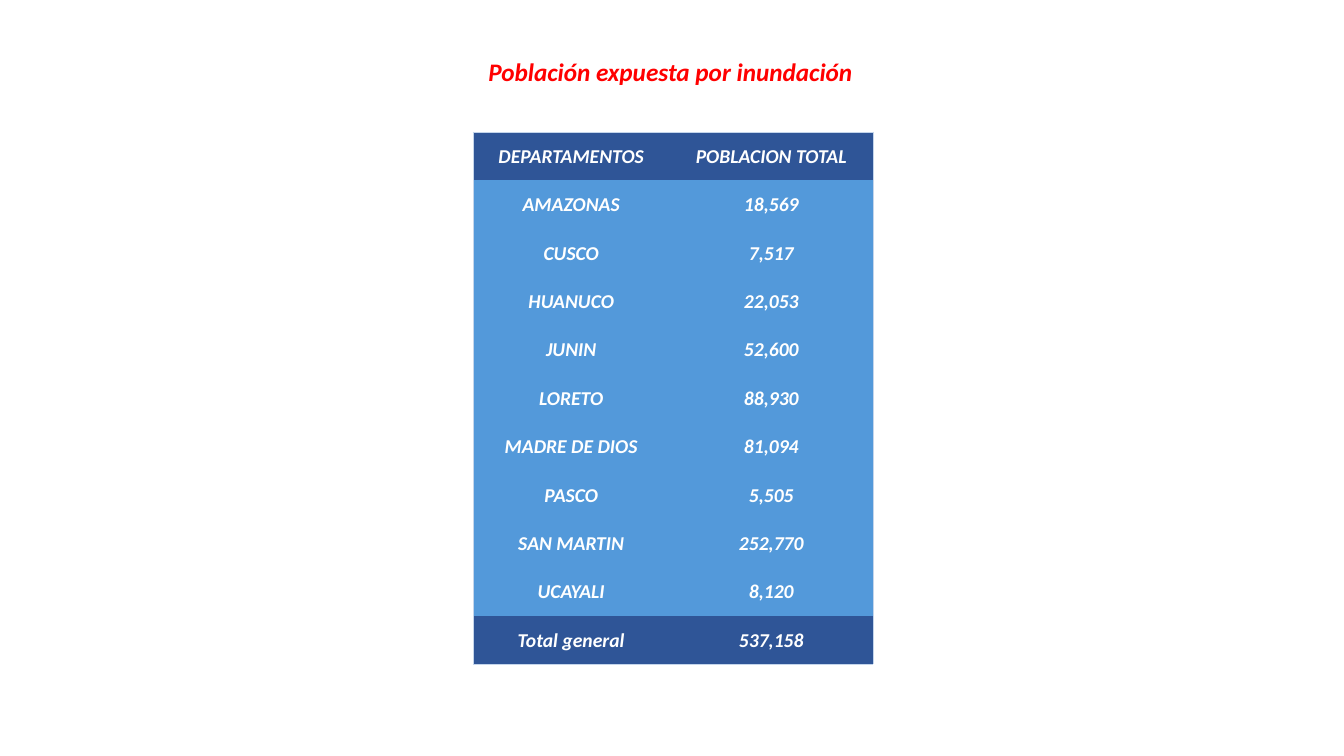
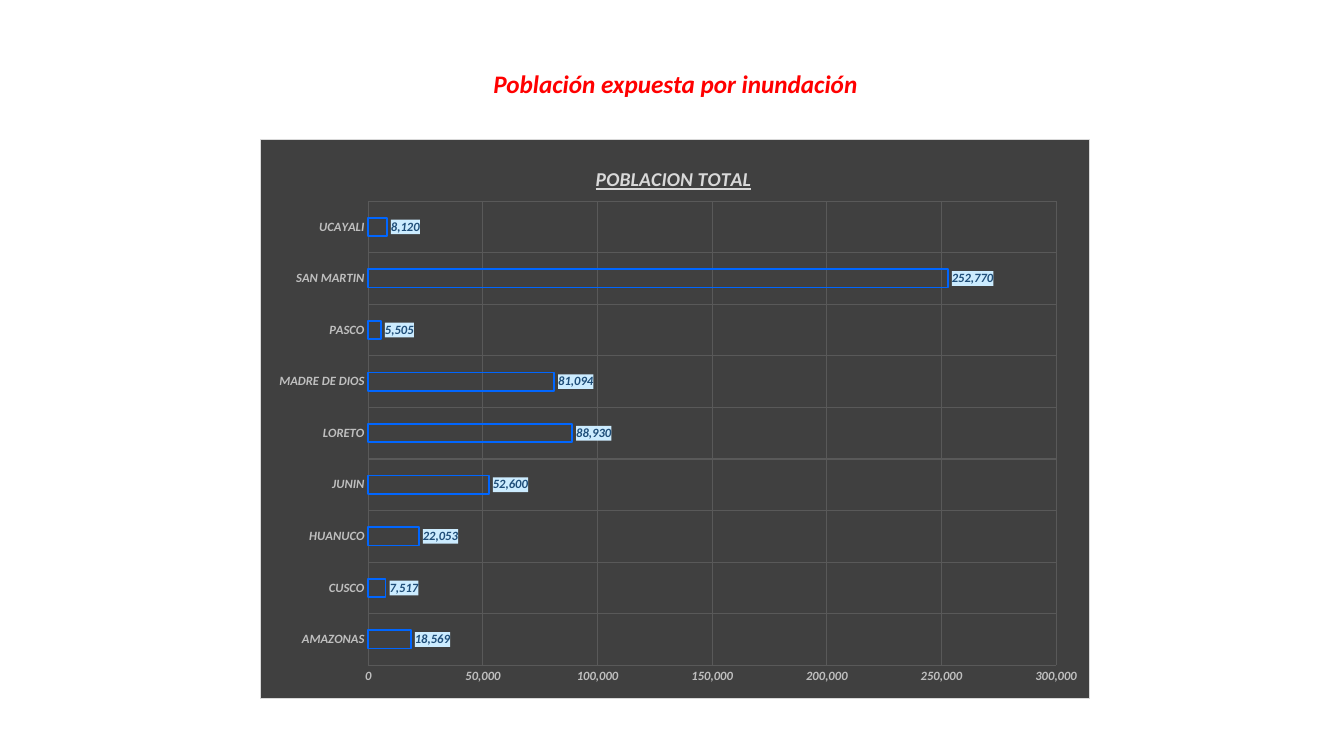
import pptx
import pptx.chart.data
import pptx.dml.color
import pptx.enum.chart
import pptx.enum.text
import pptx.oxml
import pptx.oxml.ns
import pptx.util

Inches, Pt = pptx.util.Inches, pptx.util.Pt
qn = pptx.oxml.ns.qn
XL = pptx.enum.chart
MSO = pptx.enum.text
NS = pptx.oxml.ns.nsdecls("a", "c")


class Theme:
    # Colours
    title, white = "FF0000", "FFFFFF"
    band, body, border = "2F5597", "5399DA", "C4D5EB"
    chart_bg, chart_border, grid = "404040", "D9D9D9", "595959"
    chart_title, axis = "D9D9D9", "BFBFBF"
    bar, label, label_bg = "0066FF", "1F4E79", "CCECFF"
    # Type
    font = {"name": "Calibri", "bold": True, "italic": True}
    title_size, cell_size, chart_size = Pt(18), Pt(14), Pt(9)


TITLE = "Población expuesta por inundación"
HEADS = ("DEPARTAMENTOS", "POBLACION TOTAL")
POPULATION = {
    "AMAZONAS": 18569, "CUSCO": 7517, "HUANUCO": 22053, "JUNIN": 52600,
    "LORETO": 88930, "MADRE DE DIOS": 81094, "PASCO": 5505,
    "SAN MARTIN": 252770, "UCAYALI": 8120,
}


def rgb(color):
    return pptx.dml.color.RGBColor.from_string(color)


def set_attrs(obj, values):
    for name, value in values.items():
        setattr(obj, name, value)


def set_font(font, size, color, **extra):
    set_attrs(font, {**Theme.font, "size": size, **extra})
    font.color.rgb = rgb(color)


def set_line(line, color, width):
    line.color.rgb = rgb(color)
    line.width = Pt(width)


def set_layout(el, index, inner=False, **fractions):
    """Place a chart part by fractions of the chart's size."""
    for old in el.findall(qn("c:layout")):
        el.remove(old)
    target = '<c:layoutTarget val="inner"/>' if inner else ""
    modes = "".join(f'<c:{k}Mode val="edge"/>' for k in "xy")
    places = "".join(f'<c:{k} val="{v}"/>' for k, v in fractions.items())
    el.insert(index, pptx.oxml.parse_xml(
        f"<c:layout {NS}><c:manualLayout>{target}{modes}{places}"
        "</c:manualLayout></c:layout>"))


class Deck:
    def __init__(self):
        self.prs = pptx.Presentation()
        self.prs.slide_width, self.prs.slide_height = Inches(13.33), Inches(7.5)
        self.s = None

    def slide(self):
        self.s = self.prs.slides.add_slide(self.prs.slide_layouts[6])

    def title(self, left, top):
        sp = self.s.shapes.add_textbox(
            Inches(left), Inches(top), Inches(3.86), Inches(0.4))
        tf = sp.text_frame
        set_attrs(tf, {"word_wrap": False,
                       "auto_size": MSO.MSO_AUTO_SIZE.SHAPE_TO_FIT_TEXT})
        p = tf.paragraphs[0]
        p.alignment = MSO.PP_ALIGN.CENTER
        r = p.add_run()
        r.text = TITLE
        set_font(r.font, Theme.title_size, Theme.title)

    def borders(self, cell, outer):
        tcPr = cell._tc.get_or_add_tcPr()
        for i, side in enumerate("LRTB"):
            fill = (f'<a:solidFill><a:srgbClr val="{Theme.border}"/></a:solidFill>'
                    if side in outer else "<a:noFill/>")
            tcPr.insert(i, pptx.oxml.parse_xml(
                f'<a:ln{side} {NS} w="{Pt(0.5)}">{fill}</a:ln{side}>'))

    def table(self, rows, left, top, widths, row_height):
        last = len(rows) - 1
        tbl = self.s.shapes.add_table(
            len(rows), len(widths), Inches(left), Inches(top),
            Inches(sum(widths)), Inches(row_height * len(rows))).table
        set_attrs(tbl, {"first_row": False, "horz_banding": False})
        for col, width in zip(tbl.columns, widths):
            col.width = Inches(width)
        for i, row in enumerate(rows):
            tbl.rows[i].height = Inches(row_height)
            for j, text in enumerate(row):
                cell = tbl.cell(i, j)
                set_attrs(cell, {
                    "text": text, "vertical_anchor": MSO.MSO_ANCHOR.MIDDLE,
                    "margin_left": Inches(0.01), "margin_right": Inches(0.01),
                    "margin_top": Inches(0.01), "margin_bottom": 0})
                p = cell.text_frame.paragraphs[0]
                p.alignment = MSO.PP_ALIGN.CENTER
                set_font(p.runs[0].font, Theme.cell_size, Theme.white)
                cell.fill.solid()
                cell.fill.fore_color.rgb = rgb(
                    Theme.band if i in (0, last) else Theme.body)
                outer = "L" if j == 0 else "R"
                outer += {0: "T", last: "B"}.get(i, "")
                self.borders(cell, outer)

    def bar_chart(self, heading, values, left, top, width, height):
        data = pptx.chart.data.CategoryChartData(number_format="#,##0")
        data.categories = list(values)
        data.add_series(heading, list(values.values()))
        chart = self.s.shapes.add_chart(
            XL.XL_CHART_TYPE.BAR_CLUSTERED, Inches(left), Inches(top),
            Inches(width), Inches(height), data).chart
        chart.has_legend = False
        set_font(chart.font, Theme.chart_size, Theme.axis)

        # Chart background
        chart._chartSpace.find(qn("c:chart")).addnext(pptx.oxml.parse_xml(
            f'<c:spPr {NS}><a:solidFill><a:srgbClr val="{Theme.chart_bg}"/>'
            f'</a:solidFill><a:ln w="{Pt(0.75)}"><a:solidFill><a:srgbClr '
            f'val="{Theme.chart_border}"/></a:solidFill></a:ln></c:spPr>'))

        # Heading and plot position
        chart.has_title = True
        title = chart.chart_title
        title.include_in_layout = False
        r = title.text_frame.paragraphs[0].add_run()
        r.text = heading
        set_font(r.font, Theme.cell_size, Theme.chart_title, underline=True)
        set_layout(title._element, 1, x=0.4, y=0.04)
        set_layout(chart._chartSpace.chart.plotArea, 0, inner=True,
                   x=0.13, y=0.11, w=0.83, h=0.83)

        # Axes
        for axis in (chart.category_axis, chart.value_axis):
            set_attrs(axis, {"has_major_gridlines": True,
                             "major_tick_mark": XL.XL_TICK_MARK.NONE,
                             "minor_tick_mark": XL.XL_TICK_MARK.NONE})
            set_line(axis.major_gridlines.format.line, Theme.grid, 0.75)
            axis.format.line.fill.background()
            set_font(axis.tick_labels.font, Theme.chart_size, Theme.axis)
        set_attrs(chart.value_axis, {"minimum_scale": 0, "maximum_scale": 300000,
                                     "major_unit": 50000})
        set_attrs(chart.value_axis.tick_labels, {
            "number_format": "#,##0", "number_format_is_linked": False})

        # Bars
        plot = chart.plots[0]
        set_attrs(plot, {"gap_width": 182, "overlap": -50,
                         "vary_by_categories": False, "has_data_labels": True})
        bars = plot.series[0]
        bars.invert_if_negative = False
        bars.format.fill.background()
        set_line(bars.format.line, Theme.bar, 1.25)

        # Value labels
        labels = bars.data_labels
        set_attrs(labels, {"show_value": True, "number_format": "#,##0",
                           "number_format_is_linked": False,
                           "position": XL.XL_LABEL_POSITION.OUTSIDE_END})
        set_font(labels.font, Theme.chart_size, Theme.label)
        labels._element.find(qn("c:numFmt")).addnext(pptx.oxml.parse_xml(
            f'<c:spPr {NS}><a:solidFill><a:srgbClr val="{Theme.label_bg}"/>'
            "</a:solidFill><a:ln><a:noFill/></a:ln></c:spPr>"))


def main():
    deck = Deck()

    # Table of exposed population
    deck.slide()
    deck.title(4.72, 0.51)
    rows = [HEADS]
    rows += [(name, f"{count:,}") for name, count in POPULATION.items()]
    rows.append(("Total general", f"{sum(POPULATION.values()):,}"))
    deck.table(rows, 4.69, 1.31, (1.95, 2.02), 0.48)

    # Chart of exposed population
    deck.slide()
    deck.title(4.77, 0.63)
    deck.bar_chart(HEADS[1], POPULATION, 2.58, 1.38, 8.23, 5.56)

    deck.prs.save("out.pptx")


if __name__ == "__main__":
    main()
